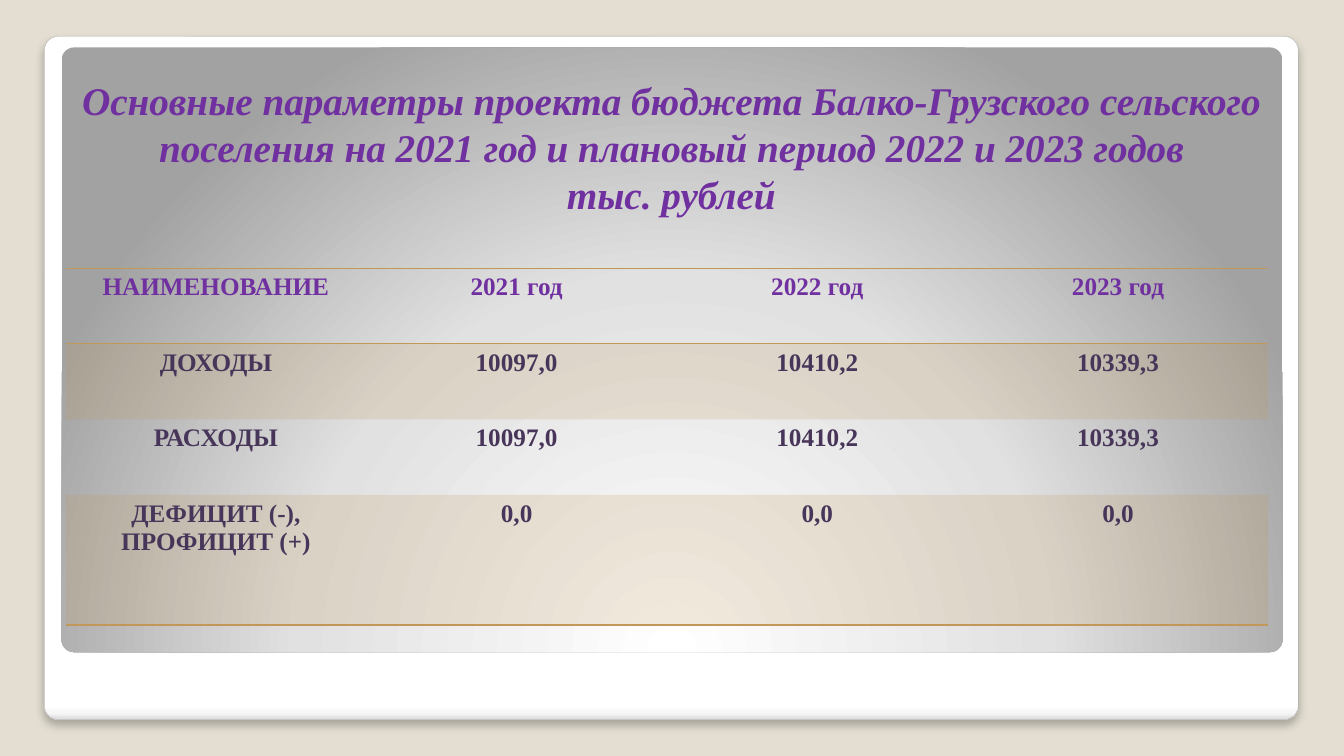
from lxml import etree
from pptx import Presentation
from pptx.dml.color import RGBColor
from pptx.enum.shapes import MSO_SHAPE
from pptx.enum.text import MSO_ANCHOR, PP_ALIGN
from pptx.oxml import parse_xml
from pptx.oxml.ns import nsdecls, qn
from pptx.util import Inches, Pt

ROUNDED = MSO_SHAPE.ROUNDED_RECTANGLE
BOTTOM = MSO_ANCHOR.BOTTOM
CENTER = PP_ALIGN.CENTER

THEME = {
    "font": "Times New Roman",
    "title_size": 28,
    "cell_size": 18,
    "background": "E3DED1",
    "heading": "7030A0",
    "body": "48365A",
    "accent": "C19859",
    "frame_line": "A4A4A4",
    "frame_stops": [(0, "FFFFFF"), (98, "FFFFFF"), (99, "F7F7F7"), (100, "DADADA")],
    "panel_stops": [(0, "FFFFFF"), (55, "E1E1E1"), (100, "A2A2A2")],
}
LINEAR = '<a:lin ang="5400000" scaled="0"/>'
RADIAL = ('<a:path path="circle"><a:fillToRect l="50000" t="175000" '
          'r="50000" b="-75000"/></a:path>')
SHADOW = ('<a:effectLst {}><a:outerShdw blurRad="76200" dist="50800" dir="5400000" '
          'algn="t" rotWithShape="0"><a:srgbClr val="000000"><a:alpha val="25000"/>'
          '</a:srgbClr></a:outerShdw></a:effectLst>')
PLAIN_TABLE = "{2D5ABB26-0587-4C30-8999-92F81FD0307C}"

prs = Presentation()
prs.slide_width, prs.slide_height = Inches(13.33), Inches(7.5)
W, H = prs.slide_width / 100, prs.slide_height / 100  # one percent of the slide
s = prs.slides.add_slide(prs.slide_layouts[6])
s.background.fill.solid()
s.background.fill.fore_color.rgb = RGBColor.from_string(THEME["background"])


def box(left, top, width, height):
    return int(left * W), int(top * H), int(width * W), int(height * H)


def style_text(p, size, color, italic=False):
    p.alignment = CENTER
    for r in p.runs:
        r.font.name = THEME["font"]
        r.font.size = Pt(size)
        r.font.bold = True
        r.font.italic = italic
        r.font.color.rgb = RGBColor.from_string(color)


# Frame and inner panel
plates = [
    (box(3.3, 4.8, 93.3, 90.4), THEME["frame_stops"], LINEAR),
    (box(4.58, 6.27, 90.85, 80), THEME["panel_stops"], RADIAL),
]
for place, stops, direction in plates:
    sp = s.shapes.add_shape(ROUNDED, *place)
    sp.adjustments[0] = 0.021
    sp.shadow.inherit = False
    sp.line.fill.background()
    stop_xml = "".join(f'<a:gs pos="{pos * 1000}"><a:srgbClr val="{color}"/></a:gs>'
                       for pos, color in stops)
    gradient = parse_xml(f'<a:gradFill {nsdecls("a")} rotWithShape="1">'
                         f'<a:gsLst>{stop_xml}</a:gsLst>{direction}</a:gradFill>')
    sp._element.spPr.find(qn("a:prstGeom")).addnext(gradient)

# Frame outline and soft shadow
frame = s.shapes[0]
frame.line.color.rgb = RGBColor.from_string(THEME["frame_line"])
frame.line.width = Pt(0.16)
effects = frame._element.spPr.find(qn("a:effectLst"))
effects.getparent().replace(effects, parse_xml(SHADOW.format(nsdecls("a"))))

# Title
tf = s.shapes.add_textbox(*box(5.2, 0, 89.5, 29.47)).text_frame
tf.word_wrap = True
tf.vertical_anchor = BOTTOM
p = tf.paragraphs[0]
p.text = ("Основные параметры проекта бюджета Балко-Грузского сельского "
          "поселения на 2021 год и плановый период 2022 и 2023 годов")
p.add_line_break()
p.add_run().text = "тыс. рублей"
style_text(p, THEME["title_size"], THEME["heading"], italic=True)

# Budget table
rows = [
    ("НАИМЕНОВАНИЕ", "2021 год", "2022 год", "2023 год"),
    ("ДОХОДЫ", "10097,0", "10410,2", "10339,3"),
    ("РАСХОДЫ", "10097,0", "10410,2", "10339,3"),
    ("ДЕФИЦИТ (-), ПРОФИЦИТ (+)", "0,0", "0,0", "0,0"),
]
row_heights = [10, 10, 10, 17.2]
ruled_sides = {0: ("lnT", "lnB"), len(rows) - 1: ("lnB",)}
table = s.shapes.add_table(len(rows), len(rows[0]),
                           *box(4.88, 35.47, 89.5, sum(row_heights))).table
table.first_row = table.horz_banding = False
table._tbl.tblPr.find(qn("a:tableStyleId")).text = PLAIN_TABLE

for i, values in enumerate(rows):
    table.rows[i].height = int(row_heights[i] * H)
    for j, value in enumerate(values):
        cell = table.cell(i, j)
        cell.margin_left = cell.margin_right = Inches(0.08)
        cell.margin_top = cell.margin_bottom = Inches(0.05)
        p = cell.text_frame.paragraphs[0]
        p.text = value
        style_text(p, THEME["cell_size"], THEME["body"] if i else THEME["heading"])
        tcPr = cell._tc.get_or_add_tcPr()
        for side in ruled_sides.get(i, ()):
            tcPr.append(parse_xml(
                f'<a:{side} {nsdecls("a")} w="12700"><a:solidFill>'
                f'<a:srgbClr val="{THEME["accent"]}"/></a:solidFill></a:{side}>'))
        if i % 2:
            cell.fill.solid()
            cell.fill.fore_color.rgb = RGBColor.from_string(THEME["accent"])
            tint = tcPr.find(qn("a:solidFill")).find(qn("a:srgbClr"))
            etree.SubElement(tint, qn("a:alpha")).set("val", "20000")
        else:
            cell.fill.background()

prs.save("out.pptx")
